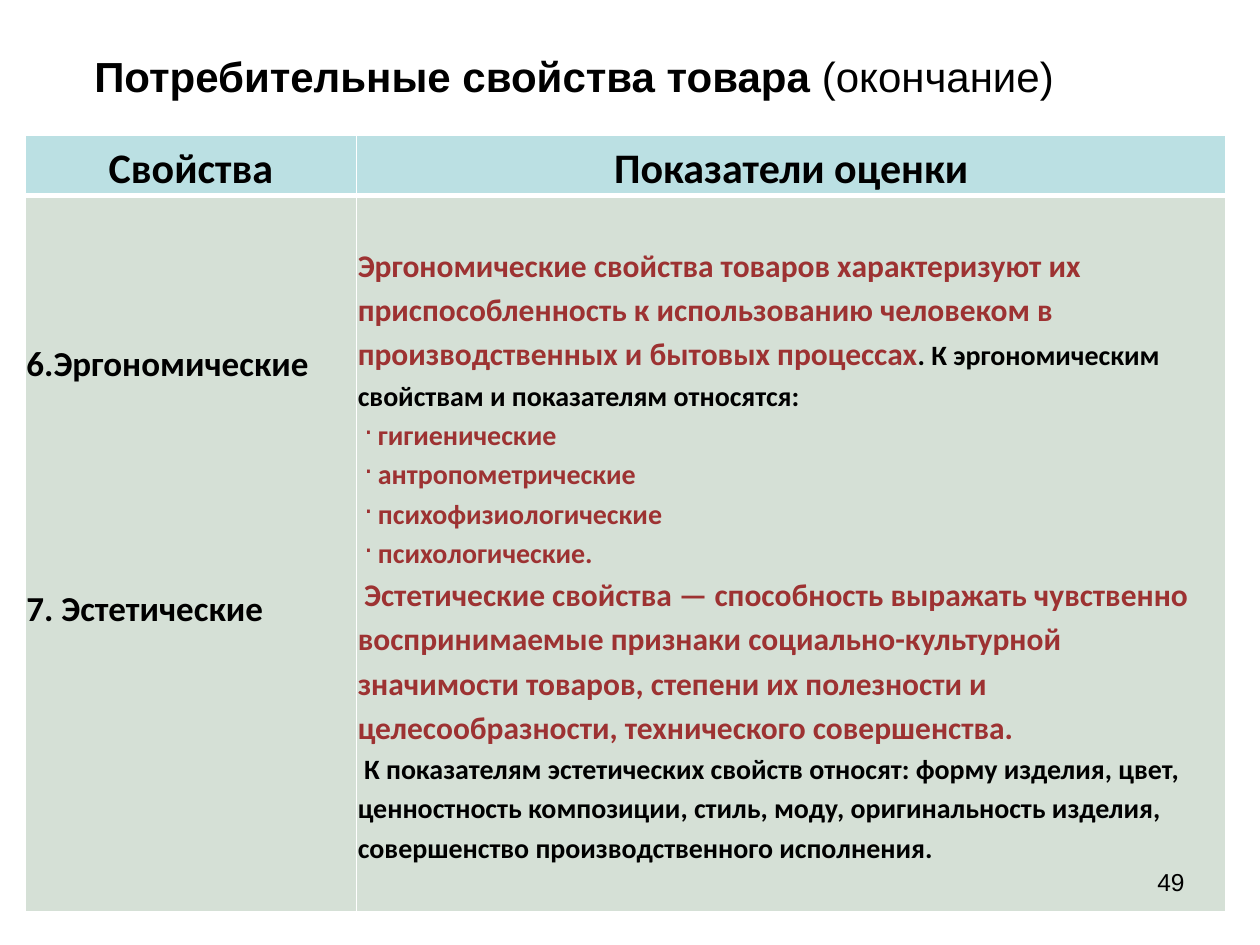
import pptx
import pptx.dml.color
import pptx.enum.text
import pptx.oxml
import pptx.oxml.ns
import pptx.util
from lxml import etree

Inches, Pt = pptx.util.Inches, pptx.util.Pt
ALIGN = pptx.enum.text.PP_ALIGN
MIDDLE = pptx.enum.text.MSO_ANCHOR.MIDDLE

# Content: each run is (text, style name)
HEADING = [("Потребительные свойства товара ", "title"), ("(окончание)", "title_note")]
PAGE_NUMBER = [("49", "page")]
COLUMN_HEADS = ["Свойства", "Показатели оценки"]
PROPERTIES = ["6.Эргономические", "7. Эстетические"]
ERGONOMIC = [
    ("Эргономические свойства товаров характеризуют их приспособленность к "
     "использованию человеком в производственных и бытовых процессах", "definition"),
    (". К эргономическим свойствам и показателям относятся:", "detail"),
]
ERGONOMIC_INDICATORS = ["гигиенические", "антропометрические",
                        "психофизиологические", "психологические."]
AESTHETIC = [
    ("Эстетические свойства — способность выражать чувственно воспринимаемые "
     "признаки социально-культурной значимости товаров, степени их полезности и "
     "целесообразности, технического совершенства.", "definition"),
]
AESTHETIC_INDICATORS = [
    ("К показателям эстетических свойств относят: форму изделия, цвет, ценностность "
     "композиции, стиль, моду, оригинальность изделия, совершенство "
     "производственного исполнения.", "detail"),
]

# Theme: colours and type
BLACK, RED = "000000", "9D3232"
THEME = {
    "head_fill": "BBE0E3", "body_fill": "D5E0D6", "border": "FFFFFF",
    "text": {
        "title": ("Arial", 24, True, BLACK),
        "title_note": ("Arial", 24, False, BLACK),
        "page": ("Arial", 14, False, BLACK),
        "head": ("Calibri", 24, True, BLACK),
        "property": ("Calibri", 20, True, BLACK),
        "definition": ("Calibri", 18, True, RED),
        "indicator": ("Calibri", 16, True, RED),
        "detail": ("Calibri", 16, True, BLACK),
    },
}
CELL = {"line_spacing": 1.15}
HEAD = {"line_spacing": 1.15, "alignment": ALIGN.CENTER}
PROPERTY_GAP = {"line_spacing": 1.15, "space_before": Pt(112)}
FIRST_LINE = {"indent": Inches(0.05)}
BULLET = {"marL": Inches(0.16), "indent": Inches(-0.11)}


def rgb(value):
    return pptx.dml.color.RGBColor.from_string(value)


def write(frame, paragraphs):
    """Fill a text frame from (runs, paragraph format, indents) rows."""
    frame.word_wrap = True
    for number, (runs, layout, indents) in enumerate(paragraphs):
        paragraph = frame.add_paragraph() if number else frame.paragraphs[0]
        for name, value in layout.items():
            setattr(paragraph, name, value)
        properties = paragraph._p.get_or_add_pPr()
        for name, value in indents.items():
            properties.set(name, str(int(value)))
        if indents is BULLET:
            bullet = etree.SubElement(properties, pptx.oxml.ns.qn("a:buChar"))
            bullet.set("char", "·")
        for text, style in runs:
            run = paragraph.add_run()
            run.text = text
            face, size, bold, color = THEME["text"][style]
            for name, value in {"name": face, "size": Pt(size), "bold": bold}.items():
                setattr(run.font, name, value)
            run.font.color.rgb = rgb(color)


def draw_borders(cell, widths):
    properties = cell._tc.get_or_add_tcPr()
    for position, (side, width) in enumerate(widths.items()):
        properties.insert(position, pptx.oxml.parse_xml(
            f'<a:ln{side} {pptx.oxml.ns.nsdecls("a")} w="{int(Pt(width))}"><a:solidFill>'
            f'<a:srgbClr val="{THEME["border"]}"/></a:solidFill></a:ln{side}>'))


presentation = pptx.Presentation()
presentation.slide_width, presentation.slide_height = Inches(10), Inches(7.5)
slide = presentation.slides.add_slide(presentation.slide_layouts[6])

# Title
heading = slide.shapes.add_textbox(Inches(0.59), Inches(0.28), Inches(8.91), Inches(0.64))
heading.text_frame.vertical_anchor = MIDDLE
write(heading.text_frame, [(HEADING, {}, {"marL": Inches(0.06)})])

# Table of properties and their indicators
table = slide.shapes.add_table(
    2, 2, Inches(0.2), Inches(1.07), Inches(9.53), Inches(6.14)).table
for column, width in zip(table.columns, (2.63, 6.9)):
    column.width = Inches(width)
for row, height in zip(table.rows, (0.45, 5.69)):
    row.height = Inches(height)

properties_cell = [([(name, "property")], PROPERTY_GAP if number else CELL, {})
                   for number, name in enumerate(PROPERTIES)]
indicators_cell = [
    (ERGONOMIC, CELL, {}),
    *[([(name, "indicator")], CELL, BULLET) for name in ERGONOMIC_INDICATORS],
    (AESTHETIC, CELL, FIRST_LINE),
    (AESTHETIC_INDICATORS, CELL, FIRST_LINE),
]
rows = [
    ("head_fill", {"L": 1, "R": 1, "T": 1, "B": 3},
     [[([(head, "head")], HEAD, {})] for head in COLUMN_HEADS]),
    ("body_fill", {"L": 1, "R": 1, "T": 3, "B": 1}, [properties_cell, indicators_cell]),
]
for row, (fill, borders, contents) in zip(table.rows, rows):
    for cell, paragraphs in zip(row.cells, contents):
        for side in ("left", "top", "right", "bottom"):
            setattr(cell, f"margin_{side}", Inches(0.01))
        cell.vertical_anchor = MIDDLE
        cell.fill.solid()
        cell.fill.fore_color.rgb = rgb(THEME[fill])
        draw_borders(cell, borders)
        write(cell.text_frame, paragraphs)
# The property names sit above the middle of their cell
table.cell(1, 0).margin_bottom = Inches(1.12)

# Page number
page = slide.shapes.add_textbox(Inches(7.17), Inches(6.83), Inches(2.33), Inches(0.52))
write(page.text_frame, [(PAGE_NUMBER, {"alignment": ALIGN.RIGHT}, {})])

presentation.save("out.pptx")
